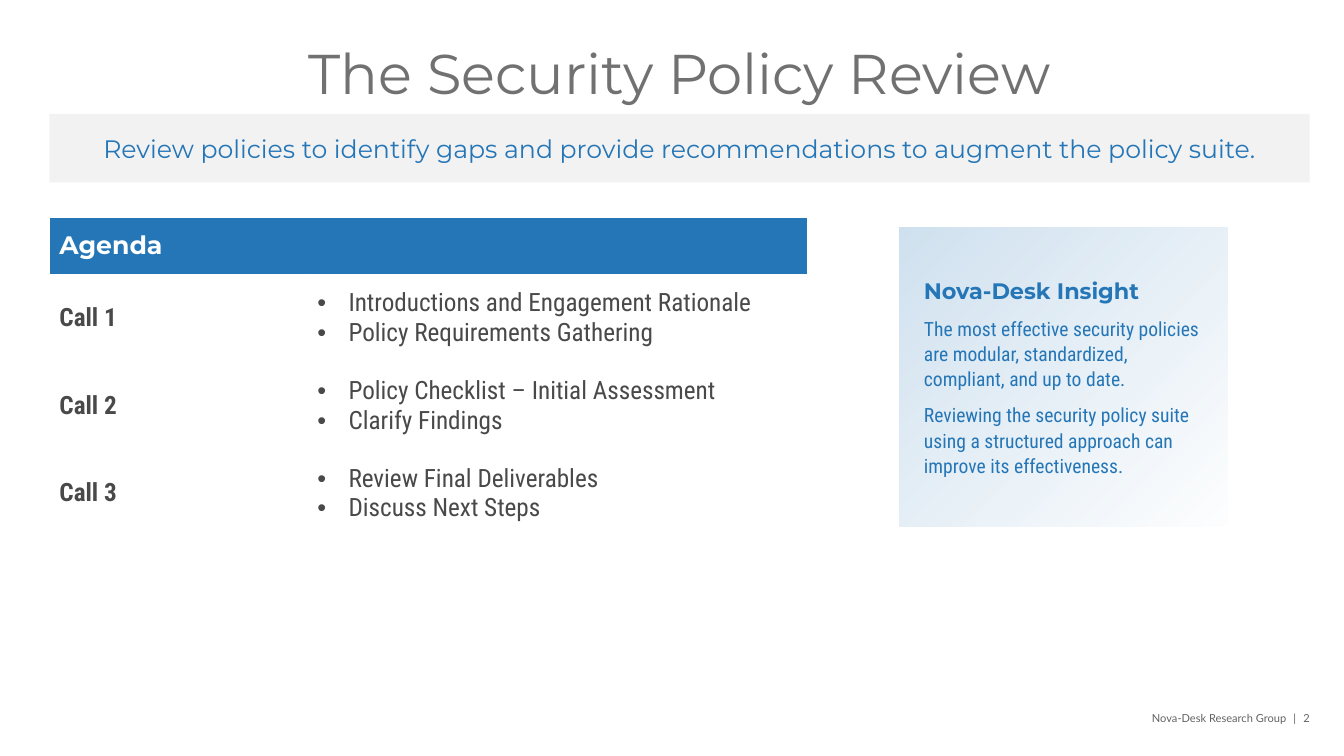
import pptx
import pptx.util
import pptx.dml.color
import pptx.enum.shapes
import pptx.enum.text
import pptx.oxml.ns
import lxml.etree

Pt = pptx.util.Pt
RGB = pptx.dml.color.RGBColor
ALIGN = pptx.enum.text.PP_ALIGN
MIDDLE = pptx.enum.text.MSO_ANCHOR.MIDDLE
qn = pptx.oxml.ns.qn

BLUE = RGB(0x25, 0x76, 0xB7)
HEADER_BLUE = RGB(0x24, 0x76, 0xB7)
TITLE_GREY = RGB(0x71, 0x71, 0x71)
TEXT_GREY = RGB(0x49, 0x49, 0x49)
FOOTER_GREY = RGB(0x63, 0x63, 0x63)
BAND_GREY = RGB(0xF2, 0xF2, 0xF2)
WHITE = RGB(0xFF, 0xFF, 0xFF)

AGENDA = [
    ("Call 1", ["Introductions and Engagement Rationale", "Policy Requirements Gathering"]),
    ("Call 2", ["Policy Checklist – Initial Assessment", "Clarify Findings"]),
    ("Call 3", ["Review Final Deliverables", "Discuss Next Steps"]),
]


class Deck:
    """Holds the text styles and the current slide; lengths are percent of the slide."""

    STYLES = {
        "title": dict(name="Montserrat", size=Pt(40), color=TITLE_GREY),
        "band": dict(name="Montserrat", size=Pt(18), color=BLUE),
        "header": dict(name="Montserrat", size=Pt(18), color=WHITE, bold=True),
        "call": dict(name="Roboto Condensed", size=Pt(18), color=TEXT_GREY, bold=True),
        "topic": dict(name="Roboto Condensed", size=Pt(18), color=TEXT_GREY, bold=False),
        "insight": dict(name="Montserrat", size=Pt(16), color=BLUE, bold=True),
        "insight body": dict(name="Roboto Condensed", size=Pt(14), color=BLUE),
        "footer": dict(name="Lato", size=Pt(7.9), color=FOOTER_GREY),
    }

    def __init__(self, width, height):
        self.prs = pptx.Presentation()
        self.prs.slide_width = pptx.util.Inches(width)
        self.prs.slide_height = pptx.util.Inches(height)
        self.slide = self.prs.slides.add_slide(self.prs.slide_layouts[5])

    def x(self, share):
        return round(self.prs.slide_width * share / 100)

    def y(self, share):
        return round(self.prs.slide_height * share / 100)

    def box(self, left, top, width, height):
        return self.x(left), self.y(top), self.x(width), self.y(height)

    def run(self, p, text, style):
        r = p.add_run()
        r.text = text
        for key, value in self.STYLES[style].items():
            if key == "color":
                r.font.color.rgb = value
            else:
                setattr(r.font, key, value)
        return r

    def put_lines(self, tf, lines, bullet=False, **layout):
        """Fill a text frame with (text, style) lines; layout holds paragraph attributes."""
        tf.word_wrap = True
        for i, (text, style) in enumerate(lines):
            p = tf.add_paragraph() if i else tf.paragraphs[0]
            if bullet:
                self.bullet(p)
            for key, value in layout.items():
                setattr(p, key, value)
            self.run(p, text, style)

    def bullet(self, p):
        pPr = p._p.get_or_add_pPr()
        indent = pptx.util.Inches(0.31)
        pPr.set("marL", str(indent))
        pPr.set("indent", str(-indent))
        lxml.etree.SubElement(pPr, qn("a:buFont")).set("typeface", "Arial")
        lxml.etree.SubElement(pPr, qn("a:buChar")).set("char", "•")

    def title(self, text, *at):
        sp = self.slide.shapes.title
        sp.left, sp.top, sp.width, sp.height = self.box(*at)
        tf = sp.text_frame
        tf.auto_size = pptx.enum.text.MSO_AUTO_SIZE.NONE
        tf.vertical_anchor = MIDDLE
        self.put_lines(tf, [(text, "title")], alignment=ALIGN.CENTER, line_spacing=Pt(40))

    def rect(self, *at):
        sp = self.slide.shapes.add_shape(
            pptx.enum.shapes.MSO_SHAPE.RECTANGLE, *self.box(*at))
        sp.shadow.inherit = False
        sp.text_frame.vertical_anchor = MIDDLE
        return sp

    def band(self, text, *at):
        sp = self.rect(*at)
        sp.fill.solid()
        sp.fill.fore_color.rgb = BAND_GREY
        sp.line.fill.background()
        self.put_lines(sp.text_frame, [(text, "band")], alignment=ALIGN.CENTER)

    def insight(self, heading, body, *at):
        sp = self.rect(*at)
        sp.fill.gradient()
        sp.fill.gradient_angle = 315
        for stop in sp.fill.gradient_stops:
            stop.color.rgb = BLUE
        colors = list(sp._element.spPr.find(qn("a:gradFill")).iter(qn("a:srgbClr")))
        for color, alpha in zip(colors, (23, 0)):
            lxml.etree.SubElement(color, qn("a:alpha")).set("val", str(alpha * 1000))
        sp.line.color.rgb = WHITE
        sp.line.width = Pt(14.75)
        tf = sp.text_frame
        for side in ("left", "top", "right", "bottom"):
            setattr(tf, f"margin_{side}", pptx.util.Inches(0.35))
        lines = [(heading, "insight")] + [(text, "insight body") for text in body]
        self.put_lines(tf, lines, alignment=ALIGN.LEFT)
        for p in tf.paragraphs[1:]:
            p.space_before = Pt(8)
            p.line_spacing = Pt(18)

    def cell(self, cell, lines, fill, bullet=False):
        cell.fill.solid()
        cell.fill.fore_color.rgb = fill
        cell.vertical_anchor = MIDDLE
        self.put_lines(cell.text_frame, lines, bullet)

    def agenda(self, heading, calls, left, top, columns, header_row, row):
        at = self.box(left, top, sum(columns), header_row + row * len(calls))
        table = self.slide.shapes.add_table(len(calls) + 1, 2, *at).table
        table.first_row = table.horz_banding = False
        for column, width in zip(table.columns, columns):
            column.width = self.x(width)
        for i, table_row in enumerate(table.rows):
            table_row.height = self.y(row if i else header_row)
        table.cell(0, 0).merge(table.cell(0, 1))
        self.cell(table.cell(0, 0), [(heading, "header")], HEADER_BLUE)
        for i, (call, topics) in enumerate(calls, 1):
            self.cell(table.cell(i, 0), [(call, "call")], WHITE)
            self.cell(table.cell(i, 1), [(t, "topic") for t in topics], WHITE, bullet=True)

    def footer(self, owner, number, *at):
        tf = self.slide.shapes.add_textbox(*self.box(*at)).text_frame
        tf.word_wrap = True
        tf.margin_left = tf.margin_top = tf.margin_right = tf.margin_bottom = 0
        p = tf.paragraphs[0]
        p.alignment = ALIGN.RIGHT
        for text in (owner, " ", "|", " ", number):
            r = self.run(p, text, "footer")
            if text == " ":
                r._r.get_or_add_rPr().set("spc", "310")


def main():
    deck = Deck(13.34, 7.5)
    deck.title("The Security Policy Review", 3.67, 5.6, 93.78, 9.47)
    deck.band("Review policies to identify gaps and provide recommendations "
              "to augment the policy suite.", 3.67, 15.07, 93.78, 9.07)
    deck.agenda("Agenda", AGENDA, 3.67, 28.8, (19.19, 37.26), 7.47, 11.6)
    deck.insight("Nova-Desk Insight", [
        "The most effective security policies are modular, standardized, "
        "compliant, and up to date.",
        "Reviewing the security policy suite using a structured approach "
        "can improve its effectiveness.",
    ], 66.12, 28.67, 26.01, 42.4)
    deck.footer("Nova-Desk Research Group", "2", 79.09, 94.13, 18.37, 1.73)
    deck.prs.save("out.pptx")


if __name__ == "__main__":
    main()
